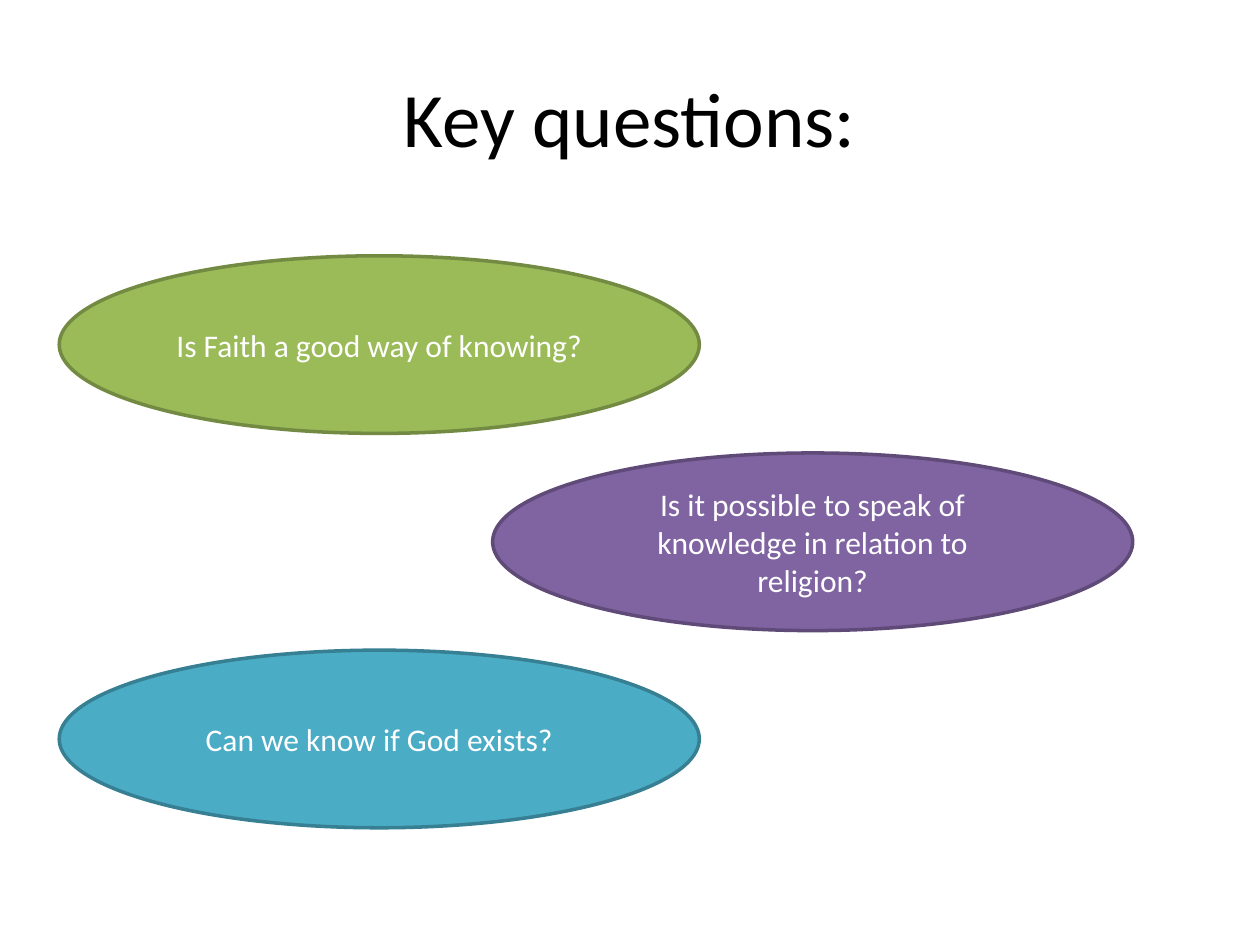
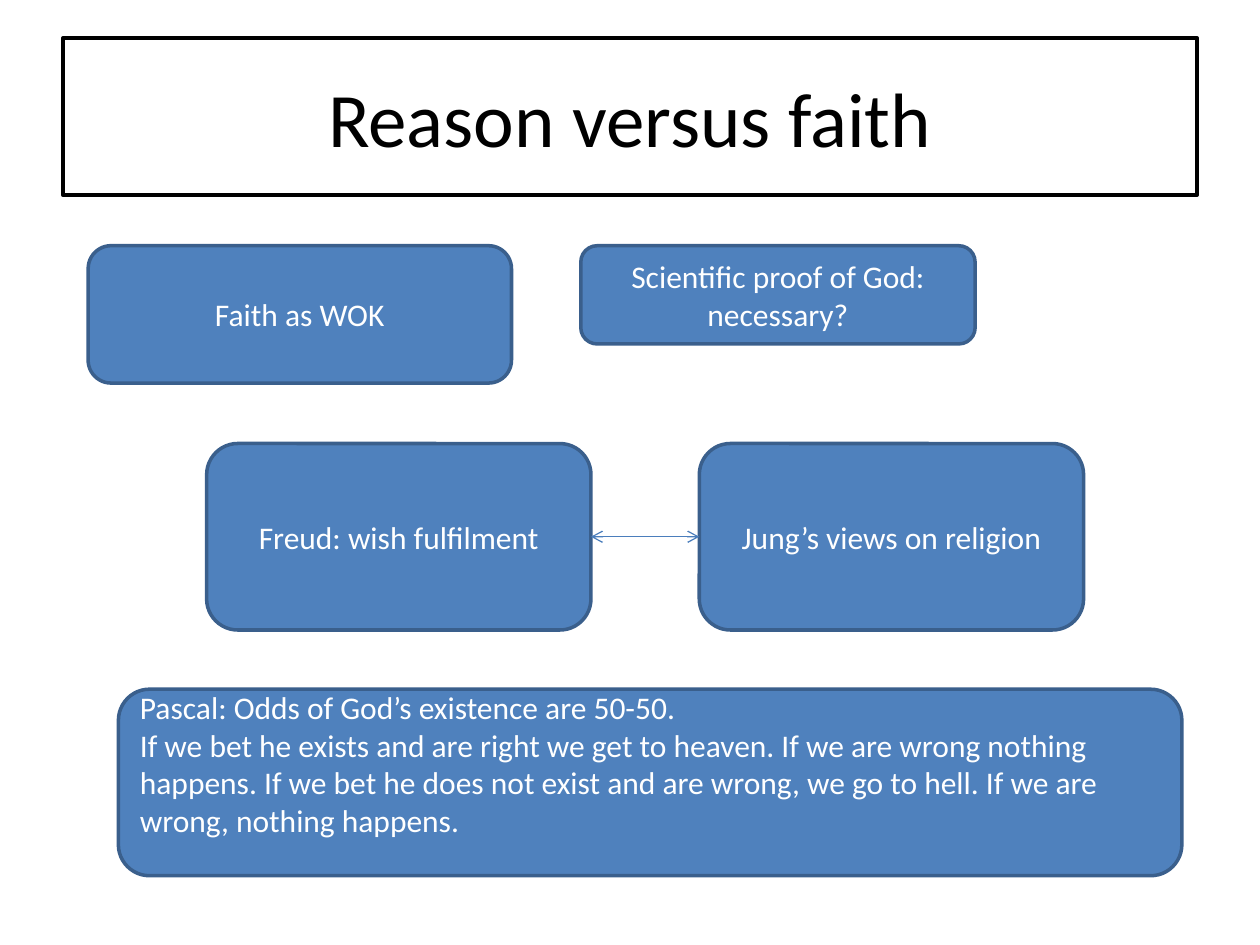
from lxml.etree import SubElement
from pptx import Presentation
from pptx.dml.color import RGBColor
from pptx.enum.shapes import MSO_CONNECTOR, MSO_SHAPE
from pptx.enum.text import MSO_ANCHOR, PP_ALIGN
from pptx.oxml.ns import qn
from pptx.util import Inches, Pt

# Shared style
FONT = "Calibri"
BLACK = RGBColor(0x00, 0x00, 0x00)
WHITE = RGBColor(0xFF, 0xFF, 0xFF)
GREEN, DARK_GREEN = RGBColor(0x9B, 0xBB, 0x59), RGBColor(0x73, 0x8A, 0x42)
PURPLE, DARK_PURPLE = RGBColor(0x80, 0x64, 0xA2), RGBColor(0x5F, 0x4A, 0x78)
TEAL, DARK_TEAL = RGBColor(0x4B, 0xAC, 0xC6), RGBColor(0x37, 0x7F, 0x92)
BLUE, DARK_BLUE = RGBColor(0x4F, 0x81, 0xBD), RGBColor(0x3A, 0x5F, 0x8C)
ARROW_BLUE = RGBColor(0x4B, 0x7E, 0xBC)
SLIDE_WIDTH, SLIDE_HEIGHT = 10, 7.5
TITLE_BOX = (0.05 * SLIDE_WIDTH, 0.04 * SLIDE_HEIGHT, 0.9 * SLIDE_WIDTH, SLIDE_HEIGHT / 6)

# Slide 1: questions, alternating between a left and a right column
QUESTIONS_TITLE = "Key questions:"
QUESTIONS = [
    ("Is Faith a good way of knowing?", GREEN, DARK_GREEN),
    ("Is it possible to speak of knowledge in relation to religion?", PURPLE, DARK_PURPLE),
    ("Can we know if God exists?", TEAL, DARK_TEAL),
]
OVAL_COLUMNS = (0.47, 3.91)
OVAL_TOP, OVAL_STEP = 2.03, 1.565
OVAL_WIDTH, OVAL_HEIGHT = 5.08, 1.41

# Slide 2: three rows of boxes
DEBATE_TITLE = "Reason versus faith"
TOP_ROW, MIDDLE_ROW, BOTTOM_ROW = 1.95, 3.52, 5.47
ROW_HEIGHT = 1.48
TOPICS = [
    ("Faith as WOK", (0.7, TOP_ROW, 3.36, 1.09)),
    ("Scientific proof of God: necessary?", (4.61, TOP_ROW, 3.13, 0.78)),
]
THINKERS = ["Freud: wish fulfilment", "Jung’s views on religion"]
THINKER_LEFT, THINKER_WIDTH, THINKER_GAP = 1.64, 3.05, 0.86
WAGER = [
    "Pascal: Odds of God’s existence are 50-50.",
    "If we bet he exists and are right we get to heaven. If we are wrong nothing "
    "happens. If we bet he does not exist and are wrong, we go to hell. If we are "
    "wrong, nothing happens.",
]
WAGER_BOX = (0.94, BOTTOM_ROW, 8.44, ROW_HEIGHT)


def write_text(shape, paragraphs, size=18, color=WHITE, align=PP_ALIGN.CENTER, bottom=0.05):
    frame = shape.text_frame
    frame.word_wrap = True
    frame.vertical_anchor = MSO_ANCHOR.MIDDLE
    frame.margin_bottom = Inches(bottom)
    frame.text = "\n".join(paragraphs)
    for paragraph in frame.paragraphs:
        paragraph.alignment = align
        paragraph.font.name = FONT
        paragraph.font.size = Pt(size)
        paragraph.font.color.rgb = color


def paint(shape, fill, line):
    shape.fill.solid()
    shape.fill.fore_color.rgb = fill
    shape.line.color.rgb = line
    shape.line.width = Pt(2)


def add_box(slide, kind, box, paragraphs, fill=BLUE, line=DARK_BLUE, **text_format):
    shape = slide.shapes.add_shape(kind, *map(Inches, box))
    shape.shadow.inherit = False
    paint(shape, fill, line)
    write_text(shape, paragraphs, **text_format)
    return shape


def add_titled_slide(presentation, title, framed=False):
    slide = presentation.slides.add_slide(presentation.slide_layouts[6])
    title_box = slide.shapes.add_textbox(*map(Inches, TITLE_BOX))
    if framed:
        paint(title_box, WHITE, BLACK)
    write_text(title_box, [title], size=44, color=BLACK)
    return slide


def add_double_arrow(slide, left_box, right_box):
    connector = slide.shapes.add_connector(MSO_CONNECTOR.STRAIGHT, 0, 0, 0, 0)
    connector.begin_connect(left_box, 3)
    connector.end_connect(right_box, 1)
    connector.line.color.rgb = ARROW_BLUE
    connector.line.width = Pt(0.75)
    line = connector.line._get_or_add_ln()
    for end in ("a:headEnd", "a:tailEnd"):
        SubElement(line, qn(end), type="arrow")
    SubElement(connector._element.spPr, qn("a:effectLst"))


def build_questions(presentation):
    slide = add_titled_slide(presentation, QUESTIONS_TITLE)
    for row, (question, fill, line) in enumerate(QUESTIONS):
        box = (OVAL_COLUMNS[row % 2], OVAL_TOP + row * OVAL_STEP, OVAL_WIDTH, OVAL_HEIGHT)
        add_box(slide, MSO_SHAPE.OVAL, box, [question], fill, line)


def build_debate(presentation):
    slide = add_titled_slide(presentation, DEBATE_TITLE, framed=True)
    for topic, box in TOPICS:
        add_box(slide, MSO_SHAPE.ROUNDED_RECTANGLE, box, [topic])

    # Opposing thinkers, joined by a double arrow
    thinker_boxes = []
    for column, thinker in enumerate(THINKERS):
        left = THINKER_LEFT + column * (THINKER_WIDTH + THINKER_GAP)
        box = (left, MIDDLE_ROW, THINKER_WIDTH, ROW_HEIGHT)
        thinker_boxes.append(add_box(slide, MSO_SHAPE.ROUNDED_RECTANGLE, box, [thinker]))
    add_double_arrow(slide, *thinker_boxes)

    # The deeper bottom margin lifts the text by half a line
    add_box(slide, MSO_SHAPE.ROUNDED_RECTANGLE, WAGER_BOX, WAGER,
            align=PP_ALIGN.LEFT, bottom=0.35)


def main():
    presentation = Presentation()
    presentation.slide_width = Inches(SLIDE_WIDTH)
    presentation.slide_height = Inches(SLIDE_HEIGHT)
    build_questions(presentation)
    build_debate(presentation)
    presentation.save("out.pptx")


if __name__ == "__main__":
    main()
